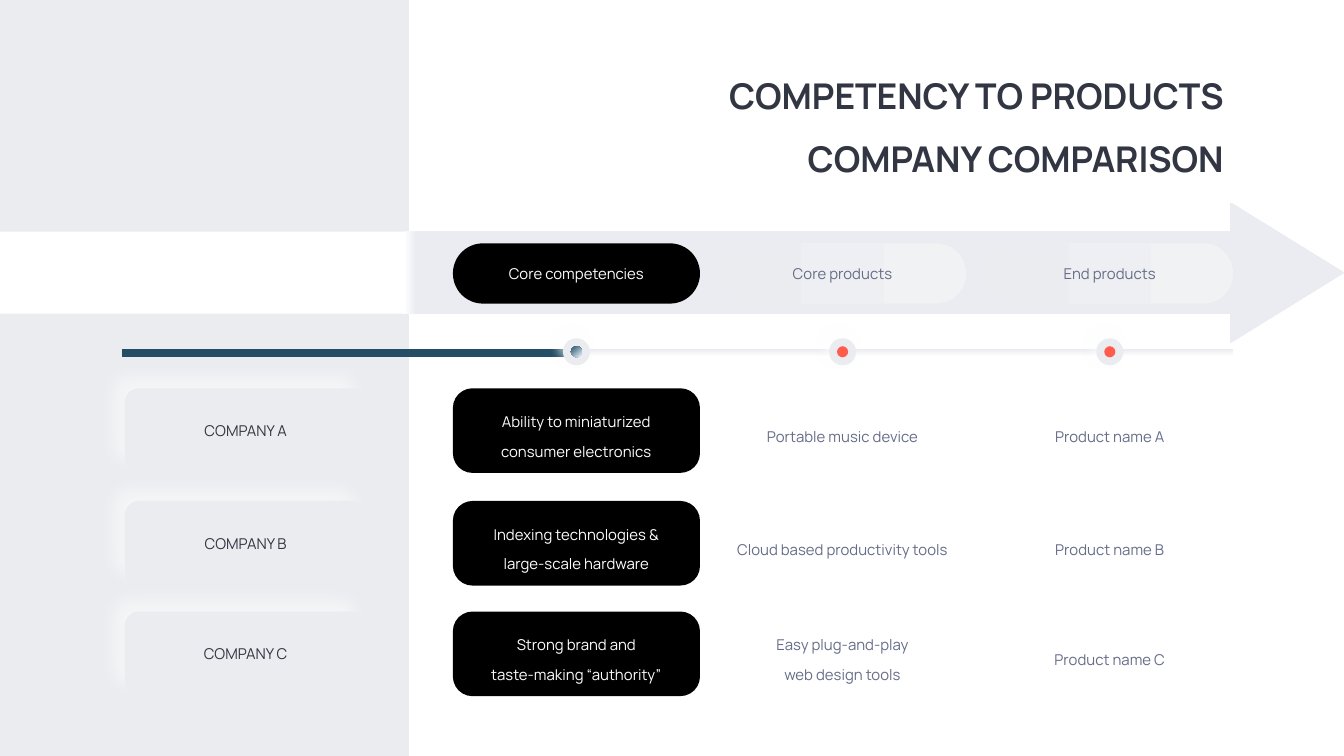
import dataclasses

import lxml.etree
import pptx
import pptx.dml.color
import pptx.enum.shapes
import pptx.enum.text
import pptx.oxml.ns
import pptx.util

Cm = pptx.util.Cm
Pt = pptx.util.Pt
RGBColor = pptx.dml.color.RGBColor
SHAPE = pptx.enum.shapes.MSO_SHAPE
ALIGN = pptx.enum.text.PP_ALIGN
ANCHOR = pptx.enum.text.MSO_ANCHOR
qn = pptx.oxml.ns.qn


@dataclasses.dataclass(frozen=True)
class Theme:
    font: str = "Manrope"
    title_size: float = 19
    body_size: float = 8
    white: str = "FFFFFF"
    black: str = "000000"
    panel: str = "EBECF0"
    arrow: str = "EBECF1"
    highlight: str = "F1F2F4"
    dark: str = "323643"
    muted: str = "656C87"
    progress: str = "234E65"
    pale_blue: str = "DAE5F1"
    accent: str = "FF5C4D"


theme = Theme()
presentation = pptx.Presentation()
presentation.slide_width = Cm(25.4)
presentation.slide_height = Cm(14.29)
slide = presentation.slides.add_slide(presentation.slide_layouts[5])


def add_shape(kind, left, top, width, height, fill, angle=0, adjustments=(), glow=None):
    """Fill is a colour or a list of (percent, colour) stops; glow is (blur, distance) in points."""
    shape = slide.shapes.add_shape(kind, Cm(left), Cm(top), Cm(width), Cm(height))
    for index, value in enumerate(adjustments):
        shape.adjustments[index] = value
    shape.line.fill.background()
    shape.shadow.inherit = False
    properties = shape._element.spPr
    if isinstance(fill, str):
        shape.fill.solid()
        shape.fill.fore_color.rgb = RGBColor.from_string(fill)
    else:
        shape.fill.gradient()
        shape.fill.gradient_angle = (360 - angle) % 360
        stops = properties.find(".//" + qn("a:gsLst"))
        for old_stop in list(stops):
            stops.remove(old_stop)
        for percent, color in fill:
            stop = lxml.etree.SubElement(stops, qn("a:gs"), pos=str(percent * 1000))
            lxml.etree.SubElement(stop, qn("a:srgbClr"), val=color)
    if glow:
        blur, distance = glow
        shadow = lxml.etree.SubElement(
            properties.find(qn("a:effectLst")), qn("a:outerShdw"),
            blurRad=str(Pt(blur)), dist=str(Pt(distance)), dir=str(225 * 60000),
            algn="br", rotWithShape="0")
        color = lxml.etree.SubElement(shadow, qn("a:srgbClr"), val=theme.white)
        lxml.etree.SubElement(color, qn("a:alpha"), val="56000")
    return shape


def write(shape, lines, color, size=theme.body_size, bold=False, align=ALIGN.CENTER,
          anchor=ANCHOR.MIDDLE, spacing=None):
    frame = shape.text_frame
    frame_format = {"word_wrap": True, "vertical_anchor": anchor,
                    "margin_left": Cm(0.18), "margin_right": Cm(0.18),
                    "margin_top": Cm(0.1), "margin_bottom": Cm(0.1)}
    for name, value in frame_format.items():
        setattr(frame, name, value)
    frame.text = "\n".join(lines)
    font_format = {"name": theme.font, "size": Pt(size), "bold": bold}
    for paragraph in frame.paragraphs:
        paragraph.alignment = align
        paragraph.line_spacing = spacing
        font = paragraph.runs[0].font
        for name, value in font_format.items():
            setattr(font, name, value)
        font.color.rgb = RGBColor.from_string(color)


# Title
title = slide.shapes.title
title_box = {"left": Cm(12.95), "top": Cm(0.89), "width": Cm(10.36), "height": Cm(2.24)}
for name, value in title_box.items():
    setattr(title, name, value)
write(title, ["COMPETENCY TO PRODUCTS COMPANY COMPARISON"], theme.dark, theme.title_size,
      bold=True, align=ALIGN.RIGHT, anchor=ANCHOR.TOP, spacing=1.5)
title.text_frame.auto_size = pptx.enum.text.MSO_AUTO_SIZE.SHAPE_TO_FIT_TEXT

# Side panel, arrow band and timeline track
add_shape(SHAPE.RECTANGLE, 0, 0, 7.73, 14.29, theme.panel)
add_shape(SHAPE.RIGHT_ARROW, 0, 3.83, 25.4, 2.65,
          [(0, theme.white), (30, theme.white), (31, theme.arrow), (100, theme.arrow)],
          adjustments=(0.585, 0.809))
add_shape(SHAPE.RECTANGLE, 2.31, 6.6, 21, 0.15,
          [(0, theme.white), (100, theme.panel)], angle=270)

# Column headings
column_lefts = (8.56, 13.59, 18.64)
column_width = 4.67
pill_gradient = [(0, theme.highlight), (100, theme.panel)]
headings = ("Core competencies", "Core products", "End products")
heading_fills = (theme.black, pill_gradient, pill_gradient)
text_colors = (theme.white, theme.muted, theme.muted)
for left, heading, fill, color in zip(column_lefts, headings, heading_fills, text_colors):
    pill = add_shape(SHAPE.ROUNDED_RECTANGLE, left, 4.6, column_width, 1.14, fill,
                     angle=180, adjustments=(0.5,))
    write(pill, [heading], color)

# Company rows
row_height = 1.6
cell_fills = (theme.black, theme.white, theme.white)
rows = (
    (7.34, "COMPANY A", (["Ability to miniaturized", "consumer electronics"],
                         ["Portable music device"], ["Product name A"])),
    (9.47, "COMPANY B", (["Indexing technologies &", "large-scale hardware"],
                         ["Cloud based productivity tools"], ["Product name B"])),
    (11.56, "COMPANY C", (["Strong brand and", "taste-making “authority”"],
                          ["Easy plug-and-play", "web design tools"], ["Product name C"])),
)
for top, company, cells in rows:
    for left, lines, fill, color in zip(column_lefts, cells, cell_fills, text_colors):
        cell = add_shape(SHAPE.ROUNDED_RECTANGLE, left, top, column_width, row_height, fill,
                         adjustments=(0.232,))
        write(cell, lines, color, spacing=1.66)
    label = add_shape(SHAPE.ROUNDED_RECTANGLE, 2.36, top, 4.57, row_height, theme.panel,
                      adjustments=(0.167,), glow=(9, 9))
    write(label, [company], theme.dark)

# Timeline progress and a marker under each column
add_shape(SHAPE.RECTANGLE, 2.31, 6.6, 8.59, 0.15, theme.progress)
active_gradient = [(0, theme.progress), (90, theme.pale_blue), (100, theme.pale_blue)]
marker_y = 6.65
for left, dot_fill in zip(column_lefts, (active_gradient, theme.accent, theme.accent)):
    center = left + column_width / 2
    for diameter, fill, glow in ((0.51, theme.panel, (5, 4)), (0.21, dot_fill, None)):
        add_shape(SHAPE.OVAL, center - diameter / 2, marker_y - diameter / 2,
                  diameter, diameter, fill, angle=50, glow=glow)

presentation.save("out.pptx")
